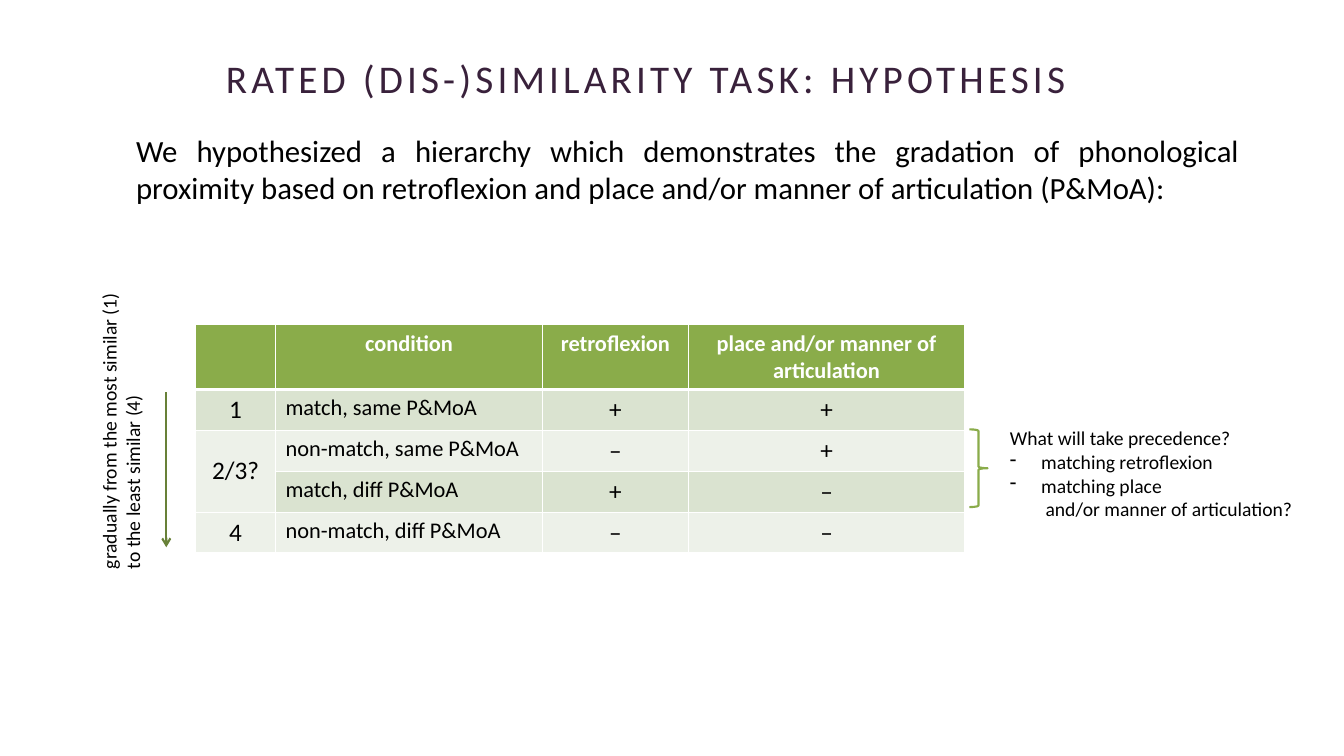
from dataclasses import dataclass

from lxml import etree
from pptx import Presentation
from pptx import util as u
from pptx.dml.color import RGBColor
from pptx.enum import shapes, text
from pptx.oxml import ns

Cm, Pt = u.Cm, u.Pt
LEFT, CENTER, JUSTIFY = text.PP_ALIGN.LEFT, text.PP_ALIGN.CENTER, text.PP_ALIGN.JUSTIFY
TOP, MIDDLE, BOTTOM = text.MSO_ANCHOR.TOP, text.MSO_ANCHOR.MIDDLE, text.MSO_ANCHOR.BOTTOM


@dataclass(frozen=True)
class Theme:
    font: str = "Calibri"
    heading: str = "39213B"
    ink: str = "000000"
    paper: str = "FFFFFF"
    green: str = "8AAC4A"
    dark_green: str = "688138"
    bands: tuple = ("DAE3D0", "EDF1E9")
    title_size: int = 28
    body_size: int = 22
    mark_size: int = 18
    cell_size: int = 16
    note_size: int = 14
    line: float = 1.5


THEME = Theme()

HEADINGS = ["", "condition", "retroflexion", "place and/or manner of articulation"]
CONDITIONS = [
    ["1", "match, same P&MoA", "+", "+"],
    ["2/3?", "non-match, same P&MoA", "–", "+"],
    ["", "match, diff P&MoA", "+", "–"],
    ["4", "non-match, diff P&MoA", "–", "–"],
]


def rgb(color):
    return RGBColor.from_string(color)


def add_xml(parent, tag, **attributes):
    return etree.SubElement(parent, ns.qn(tag), attributes)


def write(frame, *lines, size, color=THEME.ink, bold=False, align=LEFT, anchor=TOP,
          wrap=True, grow=False, tracking=0, before=0, leading=None):
    """Fill a text frame, one paragraph a line, and return its paragraphs."""
    frame.word_wrap = wrap
    frame.auto_size = (text.MSO_AUTO_SIZE.SHAPE_TO_FIT_TEXT if grow
                       else text.MSO_AUTO_SIZE.NONE)
    frame.vertical_anchor = anchor
    for number, line in enumerate(lines):
        paragraph = frame.paragraphs[0] if number == 0 else frame.add_paragraph()
        paragraph.alignment = align
        paragraph.space_before = Pt(before)
        paragraph.line_spacing = leading
        run = paragraph.add_run()
        run.text = line
        run.font.name, run.font.size, run.font.bold = THEME.font, Pt(size), bold
        run.font.color.rgb = rgb(color)
        if tracking:
            run.font._element.set("spc", str(tracking * 100))
    return frame.paragraphs


def indent(paragraph, left, first=0, bullet=None):
    properties = paragraph._p.get_or_add_pPr()
    properties.set("marL", str(left))
    properties.set("indent", str(first))
    if bullet:
        add_xml(properties, "a:buChar", char=bullet)


def fill_cell(cell, fill, bottom=1):
    cell.fill.solid()
    cell.fill.fore_color.rgb = rgb(fill)
    properties = cell._tc.get_or_add_tcPr()
    for place, (side, width) in enumerate(zip("LRTB", (1, 1, 1, bottom))):
        border = add_xml(properties, f"a:ln{side}", w=str(Pt(width)))
        add_xml(add_xml(border, "a:solidFill"), "a:srgbClr", val=THEME.paper)
        properties.insert(place, border)


# Title
def add_title(slide, left, top, width, height):
    title = slide.shapes.title
    title.left, title.top, title.width, title.height = left, top, width, height
    frame = title.text_frame
    frame.margin_left, frame.margin_right = Cm(0.25), Cm(1.57)
    frame.margin_top = frame.margin_bottom = Cm(0.13)
    write(frame, "RATED (DIS-)SIMILARITY TASK: HYPOTHESIS", size=THEME.title_size,
          color=THEME.heading, align=CENTER, anchor=BOTTOM, tracking=3, leading=0.9)


# Introductory statement
def add_statement(slide, left, top, width, height):
    statement = slide.shapes.add_textbox(left, top, width, height)
    write(statement.text_frame,
          "We hypothesized a hierarchy which demonstrates the gradation of phonological "
          "proximity based on retroflexion and place and/or manner of articulation (P&MoA):",
          size=THEME.body_size, align=JUSTIFY, before=6)


# Table of conditions
def add_hierarchy(slide, left, top, width, height):
    row_height = Cm(1.03)
    hierarchy = slide.shapes.add_table(
        len(CONDITIONS) + 1, len(HEADINGS), left, top, width, height).table
    for column, share in zip(hierarchy.columns, (0.104, 0.347, 0.19, 0.359)):
        column.width = int(width * share)
    for row in hierarchy.rows:
        row.height = row_height
    hierarchy.rows[0].height = height - row_height * len(CONDITIONS)

    for column, heading in enumerate(HEADINGS):
        cell = hierarchy.cell(0, column)
        fill_cell(cell, THEME.green, bottom=3)
        if heading:
            write(cell.text_frame, heading, size=THEME.cell_size,
                  color=THEME.paper, bold=True, align=CENTER)

    hierarchy.cell(2, 0).merge(hierarchy.cell(3, 0))
    for row, values in enumerate(CONDITIONS, 1):
        for column, value in enumerate(values):
            cell = hierarchy.cell(row, column)
            fill_cell(cell, THEME.bands[(row - 1) % 2])
            if not value:
                continue
            is_name = column == 1
            write(cell.text_frame, value,
                  size=THEME.cell_size if is_name else THEME.mark_size,
                  align=LEFT if is_name else CENTER)
            if cell.is_merge_origin:
                cell.vertical_anchor = MIDDLE


# Upright scale label with its arrow
def add_scale(slide, left, top, width, height):
    label_length, label_depth = Cm(7.62), Cm(1.45)
    label = slide.shapes.add_textbox(
        left + (label_depth - label_length) // 2,
        top + (height - label_depth) // 2, label_length, label_depth)
    label.rotation = 270
    write(label.text_frame, "gradually from the most similar (1)",
          "to the least similar (4)", size=THEME.note_size, wrap=False, grow=True)

    arrow_x, arrow_top = left + width, top + Cm(2.91)
    arrow = slide.shapes.add_connector(
        shapes.MSO_CONNECTOR.STRAIGHT, arrow_x, arrow_top, arrow_x, arrow_top + Cm(3.91))
    arrow.line.color.rgb = rgb(THEME.dark_green)
    arrow.line.width = Pt(THEME.line)
    add_xml(arrow.line._get_or_add_ln(), "a:tailEnd", type="arrow")
    add_xml(arrow._element.spPr, "a:effectLst")


# Brace and open question
def add_question(slide, left, top, width, height):
    brace = slide.shapes.add_shape(
        shapes.MSO_SHAPE.RIGHT_BRACE, left, top + Cm(0.2), Cm(0.46), Cm(1.96))
    brace.shadow.inherit = False
    brace.fill.background()
    brace.line.color.rgb = rgb(THEME.green)
    brace.line.width = Pt(THEME.line)

    offset = Cm(0.77)
    question = slide.shapes.add_textbox(left + offset, top, width - offset, height)
    _, retroflexion, place, manner = write(
        question.text_frame, "What will take precedence?", "matching retroflexion",
        "matching place", "and/or manner of articulation?",
        size=THEME.note_size, wrap=False, grow=True)
    for option in (retroflexion, place):
        indent(option, Cm(0.79), -Cm(0.79), bullet="-")
    indent(manner, Cm(0.9))


def main():
    deck = Presentation()
    deck.slide_width, deck.slide_height = Cm(33.87), Cm(19.05)
    slide = deck.slides.add_slide(deck.slide_layouts.get_by_name("Title Only"))
    add_title(slide, Cm(3.76), Cm(1.09), Cm(26.37), Cm(1.6))
    add_statement(slide, Cm(3.18), Cm(3.2), Cm(28.3), Cm(12.07))
    add_hierarchy(slide, Cm(4.93), Cm(8.18), Cm(19.38), Cm(5.75))
    add_scale(slide, Cm(2.32), Cm(6.97), Cm(1.87), Cm(7.62))
    add_question(slide, Cm(24.43), Cm(10.62), Cm(8.47), Cm(2.64))
    deck.save("out.pptx")


if __name__ == "__main__":
    main()
